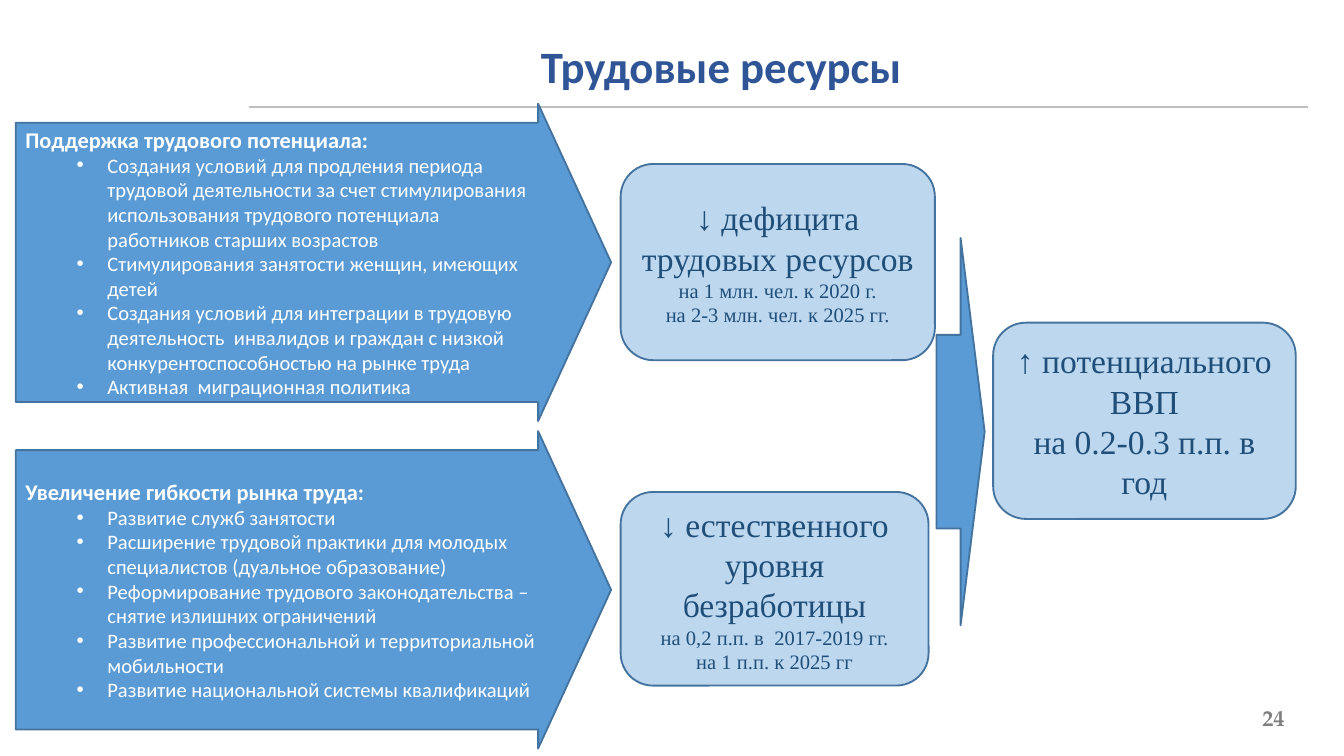
import pptx
import pptx.dml.color
import pptx.enum.shapes
import pptx.enum.text
import pptx.oxml.ns
import pptx.util
from lxml import etree

Cm, Pt = pptx.util.Cm, pptx.util.Pt
RGBColor = pptx.dml.color.RGBColor
Kind = pptx.enum.shapes.MSO_SHAPE
Align = pptx.enum.text.PP_ALIGN
qn = pptx.oxml.ns.qn

WHITE = RGBColor(0xFF, 0xFF, 0xFF)
BLUE = RGBColor(0x5B, 0x9B, 0xD5)
PALE = RGBColor(0xBD, 0xD7, 0xEE)
EDGE = RGBColor(0x43, 0x73, 0x9E)
NAVY = RGBColor(0x1F, 0x4E, 0x79)
TITLE = RGBColor(0x2F, 0x55, 0x97)
RULE = RGBColor(0xBF, 0xBF, 0xBF)
GRAY = RGBColor(0x7F, 0x7F, 0x7F)


def write(para, text, *, size, color, font="Calibri", bold=False,
          align=Align.LEFT, bullet=False):
    """Put formatted text into a paragraph."""
    para.alignment = align
    if bullet:
        para.level = 1
        props = para._p.get_or_add_pPr()
        props.set("marL", str(Cm(1.55)))
        props.set("indent", str(-Cm(0.58)))
        etree.SubElement(props, qn("a:buFont")).set("typeface", "Arial")
        etree.SubElement(props, qn("a:buChar")).set("char", "•")
    run = para.add_run()
    run.text = text
    run.font.name = font
    run.font.size = Pt(size)
    run.font.bold = bold
    run.font.color.rgb = color


class Deck:
    serif = "Times New Roman"

    def __init__(self):
        self.file = pptx.Presentation()
        self.file.slide_width = Cm(25.4)
        self.file.slide_height = Cm(14.29)
        self.slide = self.file.slides.add_slide(self.file.slide_layouts[6])

    def shape(self, kind, place, fill):
        shape = self.slide.shapes.add_shape(kind, *map(Cm, place))
        shape.shadow.inherit = False
        shape.fill.solid()
        shape.fill.fore_color.rgb = fill
        shape.line.color.rgb = EDGE
        shape.line.width = Pt(1)
        frame = shape.text_frame
        frame.word_wrap = True
        frame.vertical_anchor = pptx.enum.text.MSO_ANCHOR.MIDDLE
        frame.margin_left = frame.margin_right = Cm(0.18)
        frame.margin_top = frame.margin_bottom = Cm(0.1)
        return shape

    def arrow(self, top, head, items):
        shape = self.shape(Kind.RIGHT_ARROW, (0.3, top, 11.25, 6), BLUE)
        shape.adjustments[0] = 0.88
        shape.adjustments[1] = 0.23
        frame = shape.text_frame
        write(frame.paragraphs[0], head, size=12, color=WHITE, bold=True)
        for item in items:
            write(frame.add_paragraph(), item, size=11, color=WHITE, bullet=True)

    def box(self, place, lines):
        frame = self.shape(Kind.ROUNDED_RECTANGLE, place, PALE).text_frame
        for i, (text, size) in enumerate(lines):
            para = frame.add_paragraph() if i else frame.paragraphs[0]
            write(para, text, size=size, color=NAVY, font=self.serif,
                  align=Align.CENTER)

    def label(self, place, text, wrap=True, pad=True, **form):
        frame = self.slide.shapes.add_textbox(*map(Cm, place)).text_frame
        frame.word_wrap = wrap
        if not pad:
            frame.margin_left = frame.margin_right = 0
            frame.margin_top = frame.margin_bottom = 0
            frame.vertical_anchor = pptx.enum.text.MSO_ANCHOR.MIDDLE
        write(frame.paragraphs[0], text, bold=True, **form)

    def rule(self, left, right, top):
        line = self.slide.shapes.add_connector(
            pptx.enum.shapes.MSO_CONNECTOR.STRAIGHT,
            Cm(left), Cm(top), Cm(right), Cm(top))
        line.line.color.rgb = RULE
        line.line.width = Pt(1)
        etree.SubElement(line._element.spPr, qn("a:effectLst"))


def main():
    deck = Deck()

    # Header rule and page number
    deck.rule(4.7, 24.72, 2.03)
    deck.label((23.06, 13.44, 1.22, 0.25), "24", wrap=False, pad=False, size=12,
               color=GRAY, font="TeX Gyre Pagella", align=Align.RIGHT)

    # Policy measures
    deck.arrow(8.15, "Увеличение гибкости рынка труда:", [
        "Развитие служб занятости",
        "Расширение трудовой практики для молодых специалистов "
        "(дуальное образование)",
        "Реформирование трудового законодательства – "
        "снятие излишних ограничений",
        "Развитие профессиональной и территориальной мобильности",
        "Развитие национальной системы квалификаций",
    ])
    deck.arrow(1.96, "Поддержка трудового потенциала:", [
        "Создания условий для продления периода трудовой деятельности "
        "за счет стимулирования использования трудового потенциала "
        "работников старших возрастов",
        "Стимулирования занятости женщин, имеющих детей",
        "Создания условий для интеграции в трудовую деятельность  инвалидов "
        "и граждан с низкой конкурентоспособностью на рынке труда",
        "Активная  миграционная политика",
    ])

    # Effects on the labour market
    deck.box((11.73, 9.3, 5.82, 3.66), [
        ("↓ естественного уровня безработицы", 18),
        ("на 0,2 п.п. в  2017-2019 гг.", 11),
        ("на 1 п.п. к 2025 гг", 11),
    ])
    deck.box((11.73, 3.1, 5.94, 3.71), [
        ("↓ дефицита трудовых ресурсов", 18),
        ("на 1 млн. чел. к 2020 г.", 11),
        ("на 2-3 млн. чел. к 2025 гг.", 11),
    ])

    # Overall result
    deck.shape(Kind.RIGHT_ARROW, (17.7, 4.5, 0.91, 7.32), BLUE)
    deck.box((18.77, 6.1, 5.72, 3.71), [
        ("↑ потенциального ВВП", 18),
        ("на 0.2-0.3 п.п. в год", 18),
    ])

    # Title
    deck.label((8.64, 0.61, 9.98, 1.27), "Трудовые ресурсы", size=24,
               color=TITLE, align=Align.CENTER)

    deck.file.save("out.pptx")


if __name__ == "__main__":
    main()
